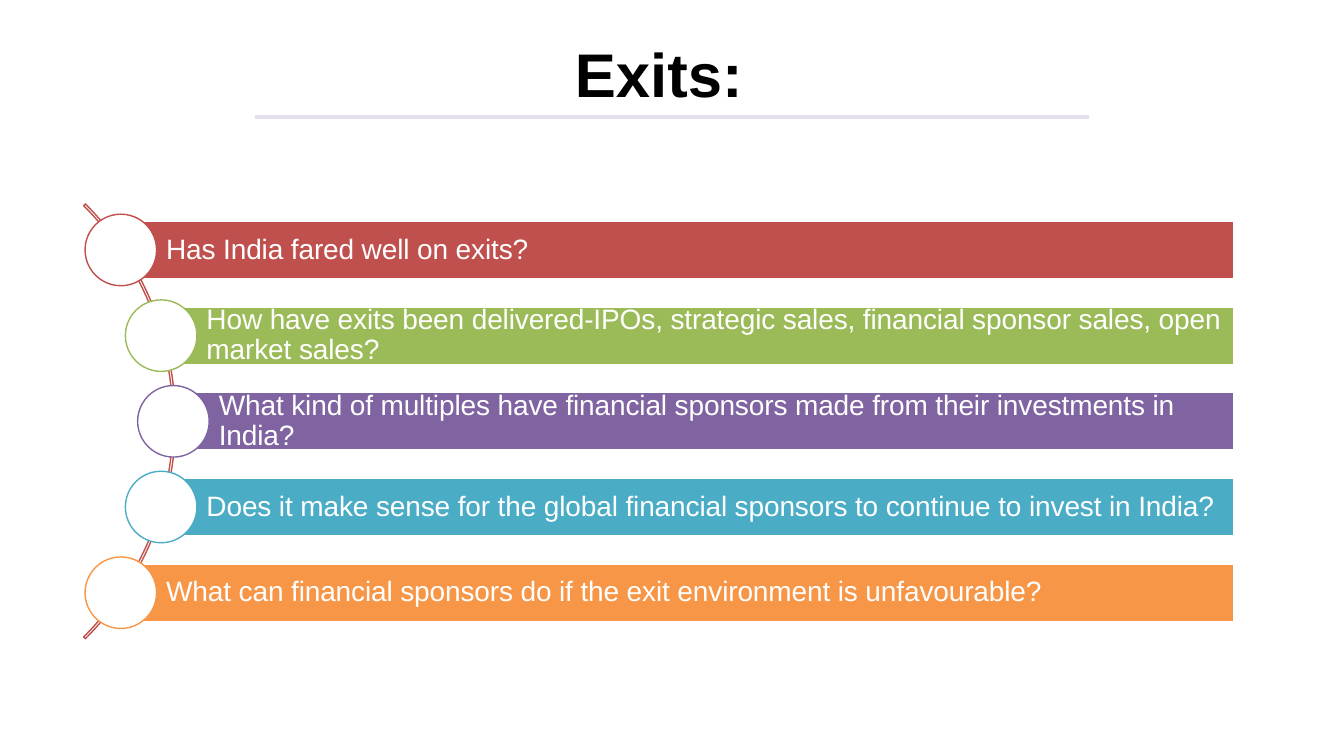
from dataclasses import dataclass
from math import sqrt

from lxml.etree import SubElement
from pptx import Presentation
from pptx.dml.color import RGBColor
from pptx.enum.shapes import MSO_CONNECTOR, MSO_SHAPE
from pptx.enum.text import MSO_ANCHOR, MSO_AUTO_SIZE, PP_ALIGN
from pptx.oxml.ns import qn
from pptx.shapes.autoshape import Shape
from pptx.slide import Slide
from pptx.text.text import TextFrame
from pptx.util import Inches, Pt

WHITE = "FFFFFF"
ARC_COLOUR = "C0504D"
ARC_CENTRE_X, ARC_CENTRE_Y = -1.31, 4.18
ARC_DIAMETER = 6.1
CIRCLE_ORBIT = 3.03
CIRCLE_DIAMETER = 0.71
BAR_HEIGHT, BAR_RIGHT = 0.57, 12.24
BAR_PITCH = 0.85


@dataclass(frozen=True)
class Question:
    text: str
    colour: str


QUESTIONS = [
    Question("Has India fared well on exits?", "C0504D"),
    Question("How have exits been delivered-IPOs, strategic sales, "
             "financial sponsor sales, open market sales?", "9BBB59"),
    Question("What kind of multiples have financial sponsors made "
             "from their investments in India?", "8064A2"),
    Question("Does it make sense for the global financial sponsors "
             "to continue to invest in India?", "4BACC6"),
    Question("What can financial sponsors do if the exit environment "
             "is unfavourable?", "F79646"),
]

BAR_FRAME = {
    "word_wrap": True,
    "vertical_anchor": MSO_ANCHOR.MIDDLE,
    "margin_left": Inches(0.45),
    "margin_right": Inches(0.06),
    "margin_top": Inches(0.06),
    "margin_bottom": Inches(0.06),
}
TITLE_FRAME = {
    "word_wrap": True,
    "auto_size": MSO_AUTO_SIZE.NONE,
    "vertical_anchor": MSO_ANCHOR.MIDDLE,
}
BAR_PARAGRAPH = {"alignment": PP_ALIGN.LEFT, "line_spacing": 0.9}
TITLE_PARAGRAPH = {"alignment": PP_ALIGN.CENTER, "line_spacing": 0.8}
BAR_FONT = {"name": "Arial", "size": Pt(20), "bold": False}
TITLE_FONT = {"name": "Arial", "size": Pt(44), "bold": True}


def colour_of(hex_value: str) -> RGBColor:
    return RGBColor.from_string(hex_value)


def apply_format(target: object, values: dict) -> None:
    for name, value in values.items():
        setattr(target, name, value)


def write_text(frame: TextFrame, text: str, colour: str, frame_format: dict,
               paragraph_format: dict, font_format: dict, tracking: int = 0) -> None:
    """Fill the frame with one formatted run; tracking is in hundredths of a point."""
    apply_format(frame, frame_format)
    para = frame.paragraphs[0]
    apply_format(para, paragraph_format)
    span = para.add_run()
    span.text = text
    apply_format(span.font, font_format)
    span.font.color.rgb = colour_of(colour)
    if tracking:
        span.font._element.set("spc", str(tracking))


def add_outlined(slide: Slide, kind: MSO_SHAPE, left: float, top: float,
                 width: float, height: float, line: str, fill: str = "") -> Shape:
    """Add a flat shape with a thin outline; without a fill it is hollow."""
    shape = slide.shapes.add_shape(
        kind, Inches(left), Inches(top), Inches(width), Inches(height))
    shape.shadow.inherit = False
    if fill:
        shape.fill.solid()
        shape.fill.fore_color.rgb = colour_of(fill)
    else:
        shape.fill.background()
    shape.line.color.rgb = colour_of(line)
    shape.line.width = Pt(1)
    return shape


def add_title(slide: Slide, text: str) -> None:
    title = slide.shapes.title
    apply_format(title, {"left": Inches(0.77), "top": Inches(0.42),
                         "width": Inches(11.53), "height": Inches(0.74)})
    write_text(title.text_frame, text, "000000",
               TITLE_FRAME, TITLE_PARAGRAPH, TITLE_FONT)
    rule = slide.shapes.add_connector(
        MSO_CONNECTOR.STRAIGHT, Inches(2.53), Inches(1.16), Inches(10.8), Inches(1.16))
    rule.line.color.rgb = colour_of("E6E0EC")
    rule.line.width = Pt(3)
    SubElement(rule._element.spPr, qn("a:effectLst"))


def add_arc(slide: Slide) -> None:
    """Draw the thin arc, from 315 to 45 degrees, that carries the circles."""
    arc = add_outlined(slide, MSO_SHAPE.BLOCK_ARC,
                       ARC_CENTRE_X - ARC_DIAMETER / 2, ARC_CENTRE_Y - ARC_DIAMETER / 2,
                       ARC_DIAMETER, ARC_DIAMETER, ARC_COLOUR)
    for index, value in enumerate((189, 27, 0.004)):
        arc.adjustments[index] = value


def add_question(slide: Slide, question: Question, rise: float) -> None:
    """Add a bar that starts at the centre of its circle on the arc."""
    x = ARC_CENTRE_X + sqrt(CIRCLE_ORBIT ** 2 - rise ** 2)
    y = ARC_CENTRE_Y + rise
    bar = add_outlined(slide, MSO_SHAPE.RECTANGLE, x, y - BAR_HEIGHT / 2,
                       BAR_RIGHT - x, BAR_HEIGHT, WHITE, question.colour)
    write_text(bar.text_frame, question.text, WHITE,
               BAR_FRAME, BAR_PARAGRAPH, BAR_FONT, tracking=-10)
    radius = CIRCLE_DIAMETER / 2
    add_outlined(slide, MSO_SHAPE.OVAL, x - radius, y - radius,
                 CIRCLE_DIAMETER, CIRCLE_DIAMETER, question.colour, WHITE)


def main() -> None:
    deck = Presentation()
    deck.slide_width, deck.slide_height = Inches(13.33), Inches(7.5)
    page = deck.slides.add_slide(deck.slide_layouts.get_by_name("Title Only"))
    add_arc(page)
    middle = len(QUESTIONS) // 2
    for index, question in enumerate(QUESTIONS):
        add_question(page, question, (index - middle) * BAR_PITCH)
    add_title(page, "Exits:")
    deck.save("out.pptx")


if __name__ == "__main__":
    main()
